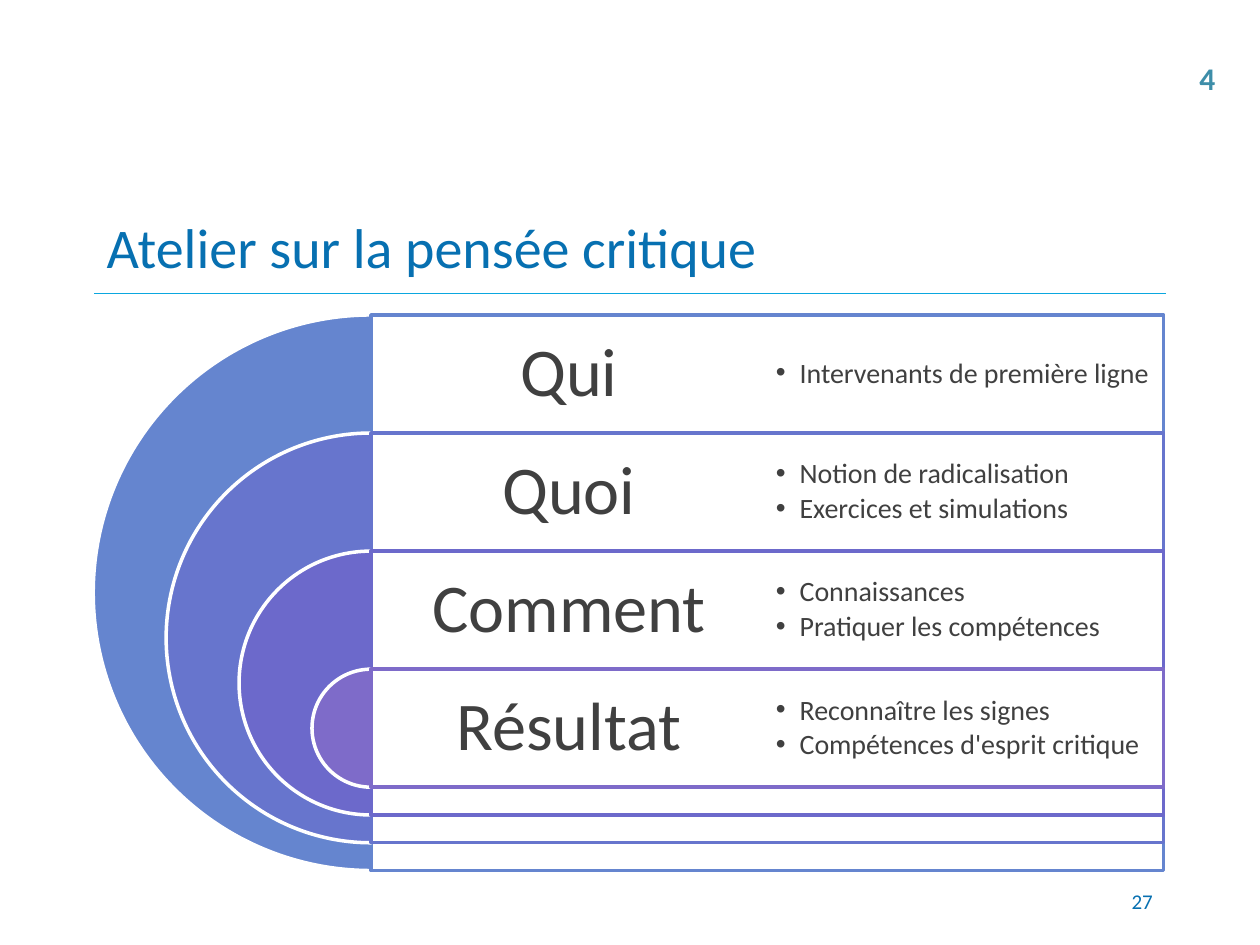
import pptx
import pptx.dml.color
import pptx.enum.shapes
import pptx.enum.text
import pptx.oxml
import pptx.oxml.ns
import pptx.util
from dataclasses import dataclass

Cm = pptx.util.Cm
Pt = pptx.util.Pt
ALIGN = pptx.enum.text.PP_ALIGN
ANCHOR = pptx.enum.text.MSO_ANCHOR
SHAPE = pptx.enum.shapes.MSO_SHAPE


@dataclass(frozen=True)
class Theme:
    font: str = "Calibri"
    title: str = "0770B1"
    rule: str = "0BA7DF"
    text: str = "404040"
    marker: str = "3E8EA9"
    white: str = "FFFFFF"
    rings: tuple = ("6585CF", "6775CD", "6C69CB", "7E6BC9")
    title_size: int = 32
    label_size: int = 39
    list_size: int = 16
    marker_size: int = 18
    number_size: int = 12


THEME = Theme()

CENTER_X = 7.48
TOP = 6.35
ROW = 2.38
DIAMETER = 11.2
SHRINK = 2.94
BAND_WIDTH = 15.98
LIST_WIDTH = 8
LABEL_INSET = 0.41

ROWS = [
    ("Qui", ["Intervenants de première ligne"]),
    ("Quoi", ["Notion de radicalisation", "Exercices et simulations"]),
    ("Comment", ["Connaissances", "Pratiquer les compétences"]),
    ("Résultat", ["Reconnaître les signes", "Compétences d'esprit critique"]),
]


def rgb(value):
    return pptx.dml.color.RGBColor.from_string(value)


def add_xml(parent, xml):
    head, rest = xml.split(" ", 1)
    el = pptx.oxml.parse_xml(f"{head} {pptx.oxml.ns.nsdecls('a')} {rest}")
    parent.append(el)


def place(sp, left, top, width, height):
    sp.left, sp.top, sp.width, sp.height = map(Cm, (left, top, width, height))


def set_frame(tf, insets, anchor=ANCHOR.MIDDLE, wrap=True):
    tf.auto_size = pptx.enum.text.MSO_AUTO_SIZE.NONE
    tf.word_wrap = wrap
    tf.vertical_anchor = anchor
    tf.margin_left, tf.margin_top, tf.margin_right, tf.margin_bottom = map(Cm, insets)


def add_run(p, text, size, color, bold=False):
    r = p.add_run()
    r.text = text
    r.font.name = THEME.font
    r.font.size = Pt(size)
    r.font.bold = bold
    r.font.color.rgb = rgb(color)


def set_title(s, text):
    sp = s.shapes.title
    place(sp, 1.9, 4.01, 21.6, 1.9)
    set_frame(sp.text_frame, (0.25, 0.13, 0.25, 0.13))
    p = sp.text_frame.paragraphs[0]
    p.alignment = ALIGN.LEFT
    add_run(p, text, THEME.title_size, THEME.title)


def add_rule(s):
    line = s.shapes.add_connector(
        pptx.enum.shapes.MSO_CONNECTOR.STRAIGHT, Cm(1.9), Cm(5.92), Cm(23.5), Cm(5.92))
    line.line.color.rgb = rgb(THEME.rule)
    line.line.width = Pt(0.75)
    add_xml(line.element.spPr, "<a:effectLst />")


def add_label(s, text, box, size, color, align, anchor, bold=False, wrap=True):
    sp = s.shapes.add_textbox(*map(Cm, box))
    set_frame(sp.text_frame, (0.25, 0.13, 0.25, 0.13), anchor, wrap)
    p = sp.text_frame.paragraphs[0]
    p.alignment = align
    add_run(p, text, size, color, bold)


def add_filled(s, kind, box, fill, line):
    sp = s.shapes.add_shape(kind, *map(Cm, box))
    sp.shadow.inherit = False
    sp.fill.solid()
    sp.fill.fore_color.rgb = rgb(fill)
    sp.line.color.rgb = rgb(line)
    sp.line.width = Pt(2)
    return sp


def add_half_disc(s, top, size, color):
    box = (CENTER_X - size / 2, top, size, size)
    sp = add_filled(s, SHAPE.PIE, box, color, THEME.white)
    sp.adjustments[0] = 54
    sp.adjustments[1] = 162


def add_band(s, label, top, height, color):
    box = (CENTER_X, top, BAND_WIDTH, height)
    sp = add_filled(s, SHAPE.RECTANGLE, box, THEME.white, color)
    fill = sp.element.spPr.find(pptx.oxml.ns.qn("a:solidFill"))
    add_xml(fill[0], '<a:alpha val="90000"/>')
    bottom = height - ROW + LABEL_INSET
    set_frame(sp.text_frame, (LABEL_INSET, LABEL_INSET, LIST_WIDTH + LABEL_INSET, bottom))
    p = sp.text_frame.paragraphs[0]
    p.alignment = ALIGN.CENTER
    p.line_spacing = 0.9
    p.space_after = Pt(13.7)
    add_run(p, label, THEME.label_size, THEME.text)


def fill_list(sp, items, top):
    sp.element.getparent().append(sp.element)
    place(sp, CENTER_X + BAND_WIDTH - LIST_WIDTH, top, LIST_WIDTH, ROW)
    tf = sp.text_frame
    set_frame(tf, (0.18,) * 4)
    for i, item in enumerate(items):
        p = tf.add_paragraph() if i else tf.paragraphs[0]
        pPr = p._p.get_or_add_pPr()
        pPr.set("marL", str(Cm(0.48)))
        pPr.set("indent", str(-Cm(0.48)))
        add_xml(pPr, f'<a:buClr ><a:srgbClr val="{THEME.text}"/></a:buClr>')
        add_xml(pPr, '<a:buFont typeface="Arial"/>')
        add_xml(pPr, '<a:buChar char="•"/>')
        p.alignment = ALIGN.LEFT
        p.line_spacing = 0.9
        p.space_before = Pt(0)
        p.space_after = Pt(2.4)
        add_run(p, item, THEME.list_size, THEME.text)


def main():
    prs = pptx.Presentation()
    prs.slide_width, prs.slide_height = Cm(25.4), Cm(19.05)
    s = prs.slides.add_slide(prs.slide_layouts.get_by_name("Comparison"))
    lists = [sp for sp in s.placeholders if sp.placeholder_format.idx in range(1, 5)]

    set_title(s, "Atelier sur la pensée critique")
    add_rule(s)
    for i, ((label, _), color) in enumerate(zip(ROWS, THEME.rings)):
        top = TOP + i * ROW
        size = DIAMETER - i * SHRINK
        add_half_disc(s, top, size, color)
        add_band(s, label, top, size, color)
    for i, (sp, (_, items)) in enumerate(zip(lists, ROWS)):
        fill_list(sp, items, TOP + i * ROW)

    add_label(s, "27", (18.21, 17.65, 5.28, 1.02), THEME.number_size, THEME.title,
              ALIGN.RIGHT, ANCHOR.MIDDLE)
    add_label(s, "4", (23.93, 1.07, 0.81, 1.02), THEME.marker_size, THEME.marker,
              ALIGN.LEFT, ANCHOR.TOP, bold=True, wrap=False)
    prs.save("out.pptx")


if __name__ == "__main__":
    main()
